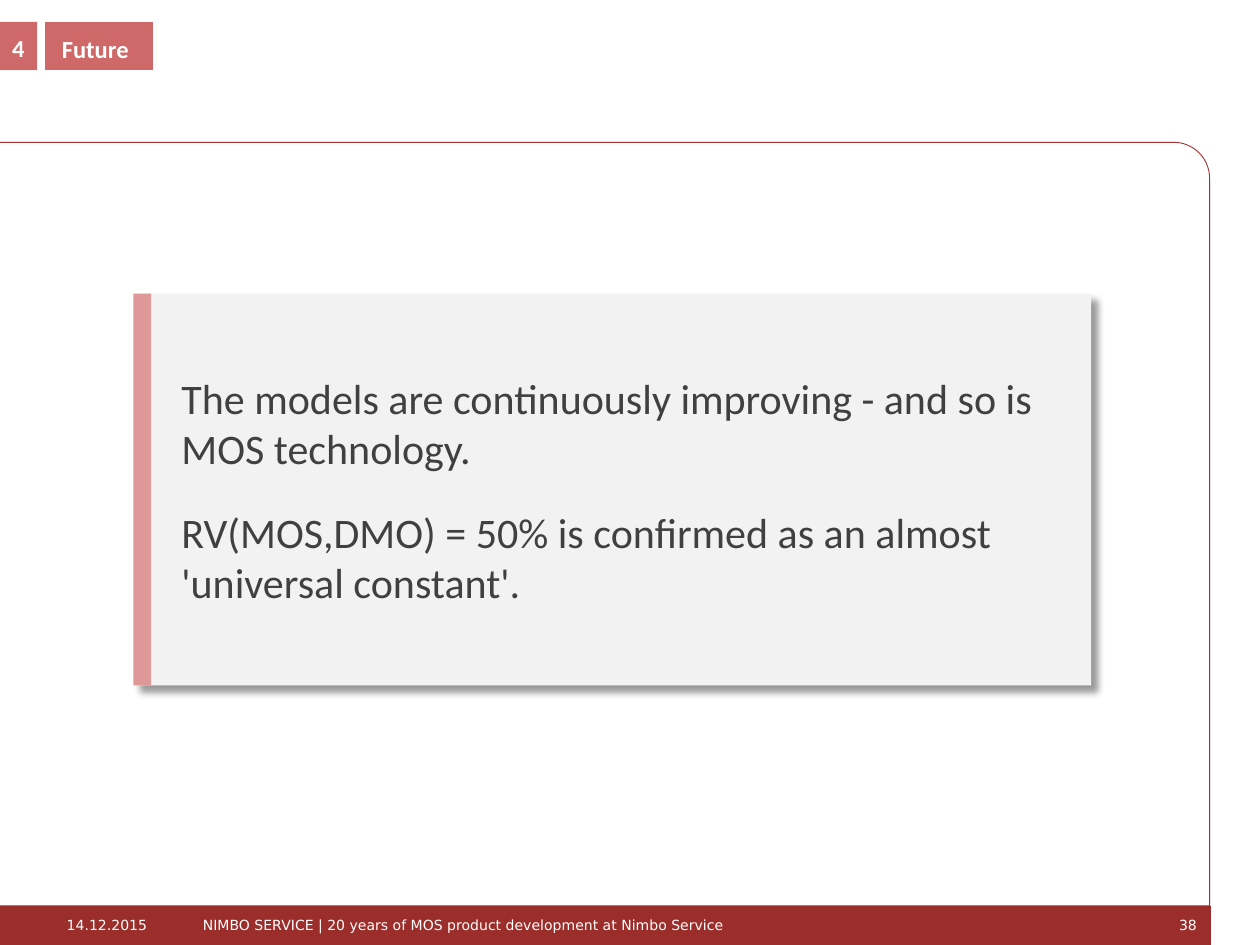
from dataclasses import dataclass
from math import cos, pi, sin

from lxml import etree
from pptx import Presentation
from pptx.dml.color import RGBColor
from pptx.enum.shapes import MSO_SHAPE
from pptx.enum.text import MSO_ANCHOR, MSO_AUTO_SIZE, PP_ALIGN
from pptx.oxml import parse_xml
from pptx.oxml.ns import nsdecls, qn
from pptx.util import Inches, Pt

RECT = MSO_SHAPE.RECTANGLE
TOP, MIDDLE = MSO_ANCHOR.TOP, MSO_ANCHOR.MIDDLE
LEFT, CENTER, RIGHT = PP_ALIGN.LEFT, PP_ALIGN.CENTER, PP_ALIGN.RIGHT

WHITE = RGBColor(0xFF, 0xFF, 0xFF)
PALE = RGBColor(0xF2, 0xF2, 0xF2)
INK = RGBColor(0x40, 0x40, 0x40)
ROSE = RGBColor(0xCF, 0x68, 0x68)
PINK = RGBColor(0xDE, 0x98, 0x98)
BRICK = RGBColor(0x9B, 0x2D, 0x2A)
EDGE = RGBColor(0x9D, 0x32, 0x32)

# The slide is a grid of 100 columns by 75 rows
CELL = Inches(0.1)
COLS, ROWS = 100, 75


@dataclass
class Box:
    col: float
    row: float
    wide: float
    high: float


@dataclass
class Style:
    font: str
    size: float
    color: RGBColor
    bold: bool = False


@dataclass
class Note:
    box: Box
    text: str
    align: PP_ALIGN


TAG = Style("Calibri", 14, WHITE, True)
BODY = Style("Calibri", 24, INK)
FOOT = Style("DejaVu Sans", 8, WHITE)


def cells(count: float) -> int:
    return round(count * CELL)


def place(shape, box: Box) -> None:
    shape.left, shape.top = cells(box.col), cells(box.row)
    shape.width, shape.height = cells(box.wide), cells(box.high)


def paint(shape, fill: RGBColor, line: RGBColor | None = None) -> None:
    shape.fill.solid()
    shape.fill.fore_color.rgb = fill
    if line is None:
        shape.line.fill.background()
    else:
        shape.line.color.rgb = line
        shape.line.width = Pt(0.5)


def add_rect(slide, box: Box, fill: RGBColor, line: RGBColor | None = None):
    shape = slide.shapes.add_shape(RECT, 0, 0, 0, 0)
    place(shape, box)
    paint(shape, fill, line)
    shape.shadow.inherit = False
    return shape


def write(shape, text: str, style: Style, align: PP_ALIGN, anchor: MSO_ANCHOR,
          pads: tuple[float, float, float, float]) -> None:
    """Set the text; pads are left, top, right and bottom in cells."""
    frame = shape.text_frame
    frame.text = text
    frame.word_wrap = True
    frame.auto_size = MSO_AUTO_SIZE.NONE
    frame.vertical_anchor = anchor
    (frame.margin_left, frame.margin_top,
     frame.margin_right, frame.margin_bottom) = map(cells, pads)
    for para in frame.paragraphs:
        para.alignment = align
        for run in para.runs:
            run.font.name = style.font
            run.font.size = Pt(style.size)
            run.font.bold = style.bold
            run.font.color.rgb = style.color


def add_frame(slide, box: Box, curve: float) -> None:
    """Draw an outline with a rounded top right corner."""
    right, low = box.col + box.wide, box.row + box.high
    turns = [pi / 2 * step / 16 for step in range(17)]
    arc = [(right - curve + curve * sin(turn), box.row + curve - curve * cos(turn))
           for turn in turns]
    points = [(cells(x), cells(y)) for x, y in arc + [(right, low), (box.col, low)]]
    pen = slide.shapes.build_freeform(cells(box.col), cells(box.row))
    pen.add_line_segments(points, close=True)
    shape = pen.convert_to_shape()
    shape.fill.background()
    shape.line.color.rgb = EDGE
    shape.line.width = Pt(0.5)
    shape.shadow.inherit = False


def cast_shade(shape) -> None:
    shape._element.spPr.append(parse_xml(
        f'<a:effectLst {nsdecls("a")}>'
        f'<a:outerShdw blurRad="{Pt(4)}" dist="{Pt(6)}" dir="2700000" algn="tl">'
        '<a:srgbClr val="000000"><a:alpha val="40000"/></a:srgbClr>'
        '</a:outerShdw></a:effectLst>'))


def strip_mark(para) -> None:
    """Remove the bullet and its hanging indent."""
    props = para._p.get_or_add_pPr()
    props.set("marL", "0")
    props.set("indent", "0")
    etree.SubElement(props, qn("a:buNone"))


def main() -> None:
    deck = Presentation()
    deck.slide_width, deck.slide_height = cells(COLS), cells(ROWS)
    slide = deck.slides.add_slide(deck.slide_layouts[1])
    title, card = slide.placeholders

    # Page frame and footer band
    add_frame(slide, Box(-0.1, 11.3, 96.1, 60.6), 2.85)
    add_rect(slide, Box(0, 71.9, 96.1, 3.1), BRICK)

    # Section tags
    place(title, Box(3.5, 1.7, 8.7, 3.9))
    paint(title, ROSE, WHITE)
    write(title, "Future", TAG, LEFT, TOP, (1.4, 1, 0, 0))
    count = add_rect(slide, Box(-0.1, 1.7, 3.1, 3.9), ROSE, PALE)
    write(count, "4", TAG, CENTER, TOP, (0, 0.9, 0, 0))

    # Message card with its side bar
    area = Box(10.6, 23.3, 76, 31.1)
    place(card, area)
    paint(card, PALE)
    cast_shade(card)
    write(card, "The models are continuously improving - and so is MOS technology.\n"
          "RV(MOS,DMO) = 50% is confirmed as an almost 'universal constant'.",
          BODY, LEFT, MIDDLE, (3.8, 0.6, 2.8, 0.6))
    for rank, para in enumerate(card.text_frame.paragraphs):
        para.space_before = Pt(19 * rank)
        strip_mark(para)
    add_rect(slide, Box(area.col, area.row, 1.4, area.high), PINK)

    # Footer notes
    notes = [
        Note(Box(5.3, 71.8, 8, 3.2), "14.12.2015", LEFT),
        Note(Box(16.1, 71.8, 70.2, 3.2),
             "NIMBO SERVICE | 20 years of MOS product development at Nimbo Service", LEFT),
        Note(Box(88.3, 71.8, 6.7, 3.2), "38", RIGHT),
    ]
    for note in notes:
        label = slide.shapes.add_textbox(0, 0, 0, 0)
        place(label, note.box)
        write(label, note.text, FOOT, note.align, MIDDLE, (0, 0, 0, 0))

    deck.save("out.pptx")


if __name__ == "__main__":
    main()
